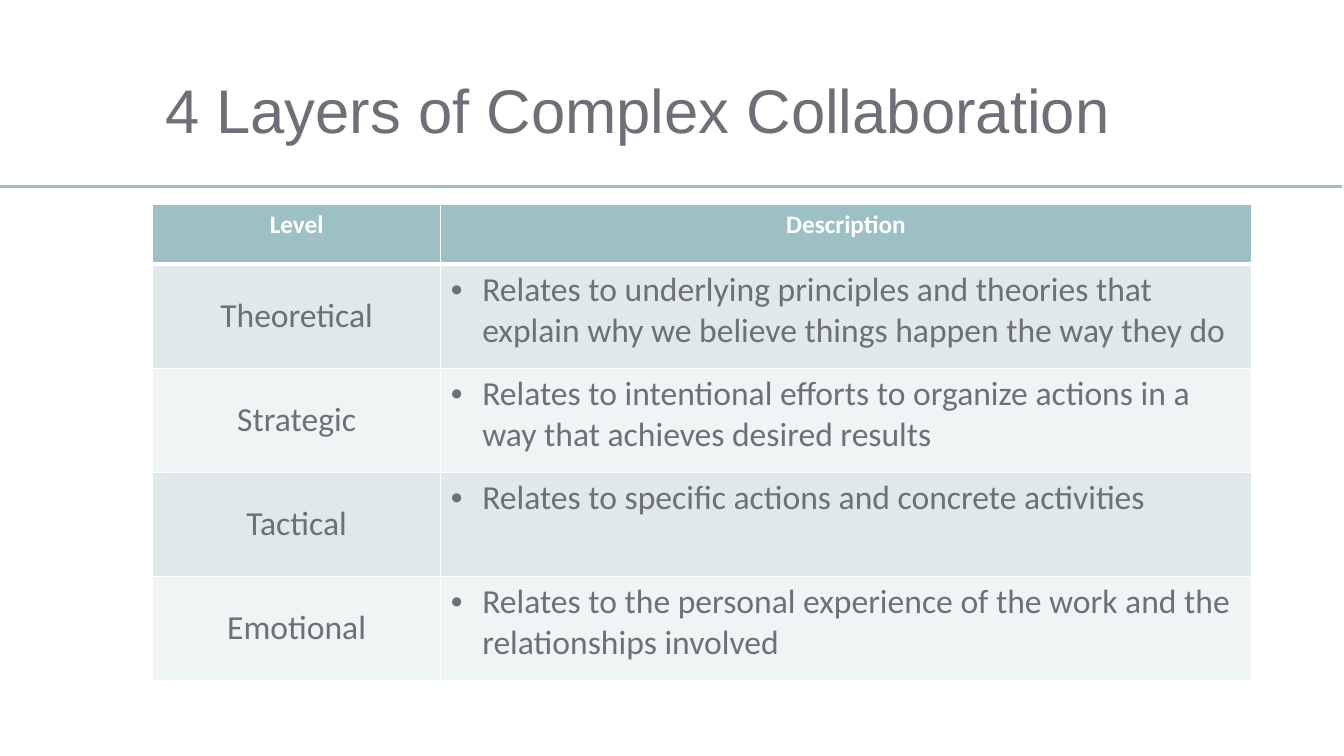
from lxml import etree
from pptx import Presentation
from pptx.dml.color import RGBColor
from pptx.enum import shapes, text
from pptx.oxml import ns
from pptx.util import Cm, Pt

TEAL, GREY, WHITE = "9DC0C4", "6D7076", "FFFFFF"
BANDS = ("DFE8EA", "EFF4F5")
HEADINGS = ("Level", "Description")
LAYERS = (
    ("Theoretical", "Relates to underlying principles and theories that explain why we believe things happen the way they do"),
    ("Strategic", "Relates to intentional efforts to organize actions in a way that achieves desired results"),
    ("Tactical", "Relates to specific actions and concrete activities"),
    ("Emotional", "Relates to the personal experience of the work and the relationships involved"),
)
HEADING = dict(name="Calibri", size=Pt(18), bold=True)
BODY = dict(name="Calibri", size=Pt(24), bold=False)
TITLE = dict(name="Arial", size=Pt(44), bold=False)


def color(hex_code):
    """Turn a hex string into a colour."""
    return RGBColor.from_string(hex_code)


def write(paragraph, wording, font_format, hex_code):
    """Put one formatted run into a paragraph."""
    run = paragraph.add_run()
    run.text = wording
    for key, value in font_format.items():
        setattr(run.font, key, value)
    run.font.color.rgb = color(hex_code)


def add_bullet(paragraph):
    """Give a paragraph a hanging round bullet."""
    props = paragraph._p.get_or_add_pPr()
    indent = Cm(0.79)
    props.set("marL", str(indent))
    props.set("indent", str(-indent))
    etree.SubElement(props, ns.qn("a:buFont"), typeface="Arial")
    etree.SubElement(props, ns.qn("a:buChar"), char="•")


def add_borders(cell, widths):
    """Draw white cell borders, with widths in points by side."""
    props = cell._tc.get_or_add_tcPr()
    for side, width in widths.items():
        border = etree.SubElement(props, ns.qn("a:ln" + side), w=str(Pt(width)))
        fill = etree.SubElement(border, ns.qn("a:solidFill"))
        etree.SubElement(fill, ns.qn("a:srgbClr"), val=WHITE)


def add_title(slide, left, top, width, height):
    """Place the slide title in its box."""
    title = slide.shapes.add_textbox(left, top, width, height).text_frame
    title.word_wrap = True
    title.vertical_anchor = text.MSO_ANCHOR.MIDDLE
    title.paragraphs[0].line_spacing = 0.9
    write(title.paragraphs[0], "4 Layers of Complex Collaboration", TITLE, GREY)


def add_rule(slide, left, top, width):
    """Draw the line under the title."""
    rule = slide.shapes.add_connector(
        shapes.MSO_CONNECTOR.STRAIGHT, left, top, left + width, top)
    rule.line.color.rgb = color(TEAL)
    rule.line.width = Pt(2)
    etree.SubElement(rule._element.spPr, ns.qn("a:effectLst"))


def add_layers(slide, left, top, width, height):
    """Build the table of layers in its box."""
    rows = (HEADINGS, *LAYERS)
    table = slide.shapes.add_table(len(rows), 2, left, top, width, height).table
    level_width, heading_height = Cm(7.27), Cm(1.52)
    table.columns[0].width = level_width
    table.columns[1].width = width - level_width
    for r, row in enumerate(rows):
        is_heading = r == 0
        table.rows[r].height = (
            heading_height if is_heading else (height - heading_height) // len(LAYERS))
        for c, wording in enumerate(row):
            cell = table.cell(r, c)
            add_borders(cell, dict(L=1, R=1, T=3 if r == 1 else 1, B=3 if is_heading else 1))
            cell.fill.solid()
            cell.fill.fore_color.rgb = color(TEAL if is_heading else BANDS[(r - 1) % 2])
            paragraph = cell.text_frame.paragraphs[0]
            if is_heading or c == 0:
                paragraph.alignment = text.PP_ALIGN.CENTER
            else:
                add_bullet(paragraph)
            if not is_heading and c == 0:
                cell.vertical_anchor = text.MSO_ANCHOR.MIDDLE
            write(paragraph, wording, *((HEADING, WHITE) if is_heading else (BODY, GREY)))


def main():
    """Build and save the slide."""
    deck = Presentation()
    deck.slide_width, deck.slide_height = Cm(33.87), Cm(19.05)
    slide = deck.slides.add_slide(deck.slide_layouts[6])
    add_rule(slide, Cm(-0.05), Cm(4.7), deck.slide_width)
    add_title(slide, Cm(3.91), Cm(1.02), Cm(27.64), Cm(3.66))
    add_layers(slide, Cm(3.84), Cm(5.14), Cm(27.69), Cm(12))
    deck.save("out.pptx")


if __name__ == "__main__":
    main()
